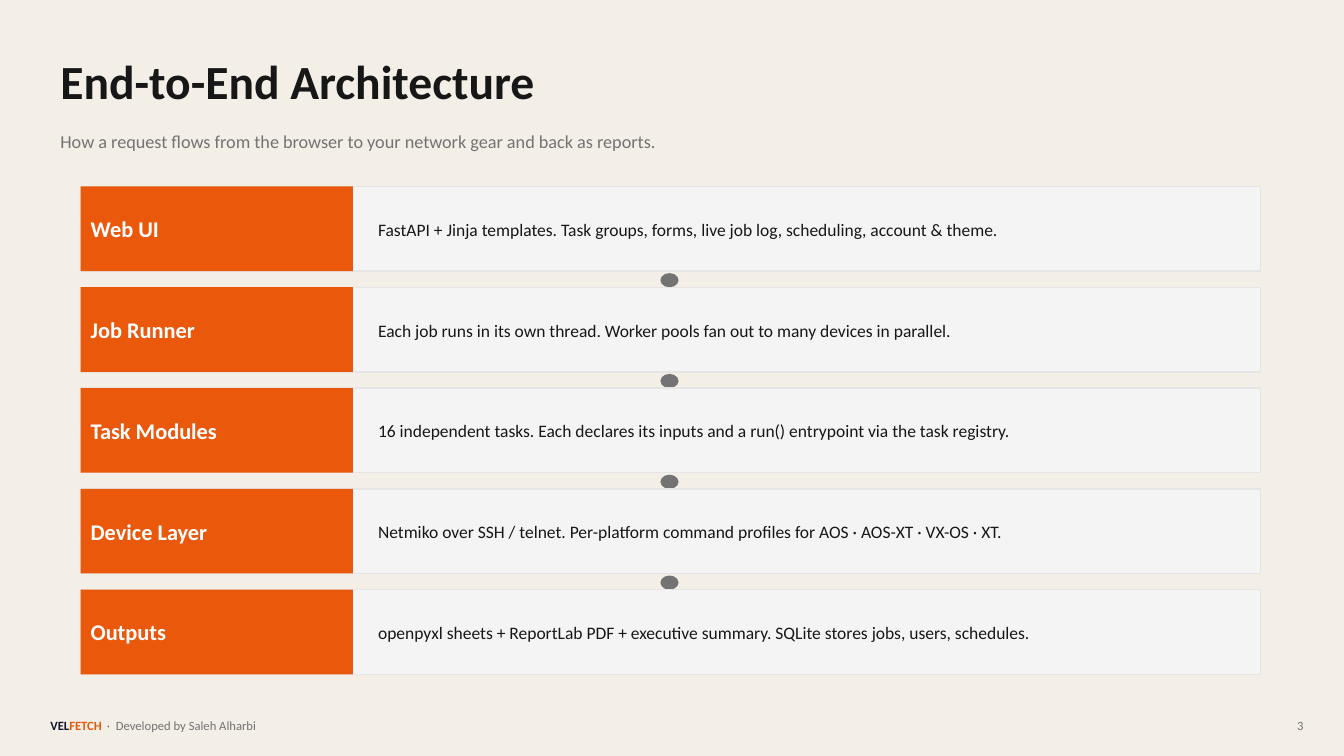
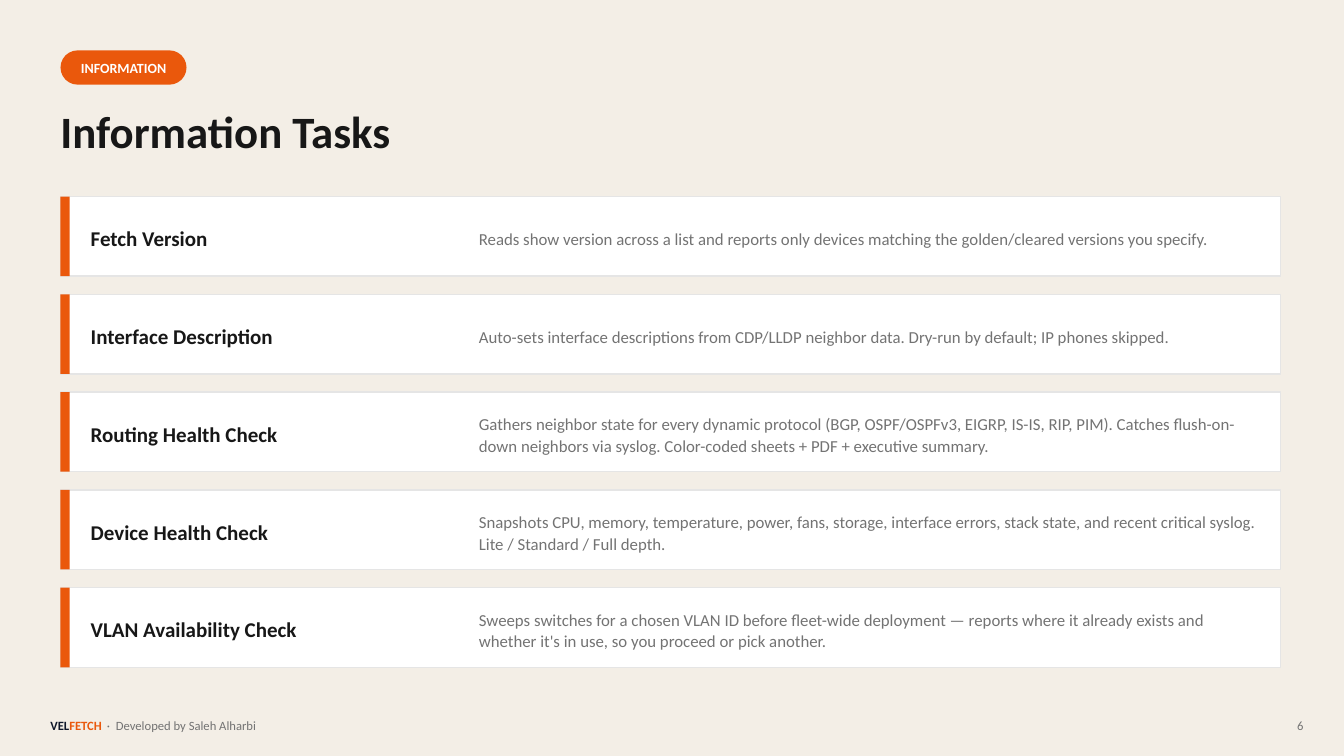
"""Build two network automation slides: the architecture layers and the information tasks."""
from dataclasses import dataclass
from typing import NamedTuple, Optional

from lxml.etree import SubElement
from pptx import Presentation
from pptx.dml.color import RGBColor
from pptx.enum.shapes import MSO_SHAPE
from pptx.enum.text import MSO_ANCHOR, MSO_AUTO_SIZE, PP_ALIGN
from pptx.oxml.ns import qn
from pptx.util import Inches, Pt

CELL = 0.1
COLUMNS, ROWS = 133.3, 75
FONT = "Calibri"
PAPER, INK, NAVY, GRAY = "F3EEE6", "171717", "0F172A", "737373"
ORANGE, WHITE, SILVER, BORDER = "EA580C", "FFFFFF", "F4F4F4", "E5E5E5"
FRAME_FORMAT = {
    "word_wrap": True, "auto_size": MSO_AUTO_SIZE.NONE, "vertical_anchor": MSO_ANCHOR.MIDDLE,
    "margin_left": 0, "margin_top": 0, "margin_right": 0, "margin_bottom": 0,
}


class Area(NamedTuple):
    """A rectangle in columns and rows of the slide grid."""
    column: float
    row: float
    width: float
    height: float


class Span(NamedTuple):
    """A run of text with its format."""
    text: str
    size: float
    color: str
    bold: bool = False


class Entry(NamedTuple):
    """The label and description of one card."""
    label: str
    description: str


@dataclass(frozen=True)
class CardStyle:
    """The shared geometry and format of a stack of cards."""
    first: Area
    pitch: float
    accent_width: float
    fill: str
    label_column: float
    label_width: float
    label_size: float
    label_color: str
    text_column: float
    text_width: float
    text_size: float
    text_color: str
    line_spacing: float
    inset: float = 0
    text_height: float = 8.4
    dots: bool = False


LAYERS = CardStyle(
    first=Area(8, 18.5, 117, 8.4), pitch=10, accent_width=27, fill=SILVER,
    label_column=9, label_width=25, label_size=16, label_color=WHITE,
    text_column=37.5, text_width=86, text_size=12.5, text_color=INK,
    line_spacing=1.05, dots=True)
TASKS = CardStyle(
    first=Area(6, 19.5, 121, 7.9), pitch=9.7, accent_width=0.9, fill=WHITE,
    label_column=9, label_width=37, label_size=15, label_color=INK,
    text_column=47.5, text_width=78, text_size=12, text_color=GRAY,
    line_spacing=1.08, inset=1.2, text_height=5.9)

LAYER_ENTRIES = [
    Entry("Web UI", "FastAPI + Jinja templates. Task groups, forms, live job log, "
          "scheduling, account & theme."),
    Entry("Job Runner", "Each job runs in its own thread. Worker pools fan out to many "
          "devices in parallel."),
    Entry("Task Modules", "16 independent tasks. Each declares its inputs and a run() "
          "entrypoint via the task registry."),
    Entry("Device Layer", "Netmiko over SSH / telnet. Per-platform command profiles for "
          "AOS · AOS-XT · VX-OS · XT."),
    Entry("Outputs", "openpyxl sheets + ReportLab PDF + executive summary. SQLite stores "
          "jobs, users, schedules."),
]
TASK_ENTRIES = [
    Entry("Fetch Version", "Reads show version across a list and reports only devices "
          "matching the golden/cleared versions you specify."),
    Entry("Interface Description", "Auto-sets interface descriptions from CDP/LLDP neighbor "
          "data. Dry-run by default; IP phones skipped."),
    Entry("Routing Health Check", "Gathers neighbor state for every dynamic protocol (BGP, "
          "OSPF/OSPFv3, EIGRP, IS-IS, RIP, PIM). Catches flush-on-down neighbors via syslog. "
          "Color-coded sheets + PDF + executive summary."),
    Entry("Device Health Check", "Snapshots CPU, memory, temperature, power, fans, storage, "
          "interface errors, stack state, and recent critical syslog. "
          "Lite / Standard / Full depth."),
    Entry("VLAN Availability Check", "Sweeps switches for a chosen VLAN ID before fleet-wide "
          "deployment — reports where it already exists and whether it's in use, so you "
          "proceed or pick another."),
]


def cells(count: float) -> int:
    """Turn a count of grid cells into a length."""
    return Inches(count * CELL)


def place(area: Area) -> list[int]:
    """Turn an area into left, top, width and height."""
    return [cells(count) for count in area]


def paint(color_holder, color: str) -> None:
    """Give a fill a solid colour from a hex string."""
    color_holder.solid()
    color_holder.fore_color.rgb = RGBColor.from_string(color)


def write(box, spans: list[Span], align=PP_ALIGN.LEFT, line_spacing: Optional[float] = None,
          tabs: tuple[float, ...] = ()) -> None:
    """Fill a box with one formatted paragraph."""
    frame = box.text_frame
    for name, value in FRAME_FORMAT.items():
        setattr(frame, name, value)
    para = frame.paragraphs[0]
    para.alignment = align
    if line_spacing:
        para.line_spacing = line_spacing
    if tabs:
        tab_list = SubElement(para._p.get_or_add_pPr(), qn("a:tabLst"))
        for position in tabs:
            SubElement(tab_list, qn("a:tab"), pos=str(cells(position)), algn="l")
    for span in spans:
        run = para.add_run()
        run.text = span.text
        font_format = {"name": FONT, "size": Pt(span.size), "bold": span.bold}
        for name, value in font_format.items():
            setattr(run.font, name, value)
        run.font.color.rgb = RGBColor.from_string(span.color)


def add_text(page, area: Area, spans: list[Span], **options) -> None:
    """Add a text box with one paragraph."""
    write(page.shapes.add_textbox(*place(area)), spans, **options)


def add_block(page, area: Area, fill: str, border: Optional[str] = None,
              kind=MSO_SHAPE.RECTANGLE):
    """Add a flat filled shape, with a border if one is given."""
    block = page.shapes.add_shape(kind, *place(area))
    block.shadow.inherit = False
    paint(block.fill, fill)
    if border:
        paint(block.line.fill, border)
        block.line.width = Pt(1)
    else:
        block.line.fill.background()
    return block


def add_page(deck, title: str, title_row: float, title_size: float, number: int):
    """Add a slide with its title and footer."""
    page = deck.slides.add_slide(deck.slide_layouts.get_by_name("Title Only"))
    box = page.shapes.title
    box.left, box.top, box.width, box.height = place(Area(6, title_row, 110, 7))
    write(box, [Span(title, title_size, INK, True)])
    add_text(page, Area(5, 70.5, 100, 3), [
        Span("VEL", 9, NAVY, True), Span("FETCH", 9, ORANGE, True),
        Span("\t·\tDeveloped by Saleh Alharbi", 9, GRAY)], tabs=(5.6, 6.5))
    add_text(page, Area(COLUMNS - 9, 70.5, 5, 3), [Span(str(number), 9, GRAY)],
             align=PP_ALIGN.RIGHT)
    return page


def add_cards(page, style: CardStyle, entries: list[Entry]) -> None:
    """Stack one card for each entry, with dots between them if wanted."""
    for index, entry in enumerate(entries):
        card = style.first._replace(row=style.first.row + index * style.pitch)
        add_block(page, card, style.fill, BORDER)
        add_block(page, card._replace(width=style.accent_width), ORANGE)
        text_row = card.row + style.inset
        add_text(page, Area(style.label_column, text_row, style.label_width, style.text_height),
                 [Span(entry.label, style.label_size, style.label_color, True)])
        add_text(page, Area(style.text_column, text_row, style.text_width, style.text_height),
                 [Span(entry.description, style.text_size, style.text_color)],
                 line_spacing=style.line_spacing)
        if style.dots and index < len(entries) - 1:
            add_block(page, Area(65.5, card.row + card.height + 0.2, 1.8, 1.4), GRAY,
                      kind=MSO_SHAPE.OVAL)


def main() -> None:
    """Build and save the deck."""
    deck = Presentation()
    deck.slide_width, deck.slide_height = cells(COLUMNS), cells(ROWS)
    paint(deck.slide_master.background.fill, PAPER)

    architecture = add_page(deck, "End-to-End Architecture", 4.5, 34, 3)
    add_text(architecture, Area(6, 12, 110, 4), [
        Span("How a request flows from the browser to your network gear and back as reports.",
             13, GRAY)])
    add_cards(architecture, LAYERS, LAYER_ENTRIES)

    tasks = add_page(deck, "Information Tasks", 9.5, 32, 6)
    pill = add_block(tasks, Area(6, 5, 12.5, 3.4), ORANGE, kind=MSO_SHAPE.ROUNDED_RECTANGLE)
    pill.adjustments[0] = 0.5
    write(pill, [Span("INFORMATION", 10, WHITE, True)], align=PP_ALIGN.CENTER)
    add_cards(tasks, TASKS, TASK_ENTRIES)

    deck.save("out.pptx")


if __name__ == "__main__":
    main()
